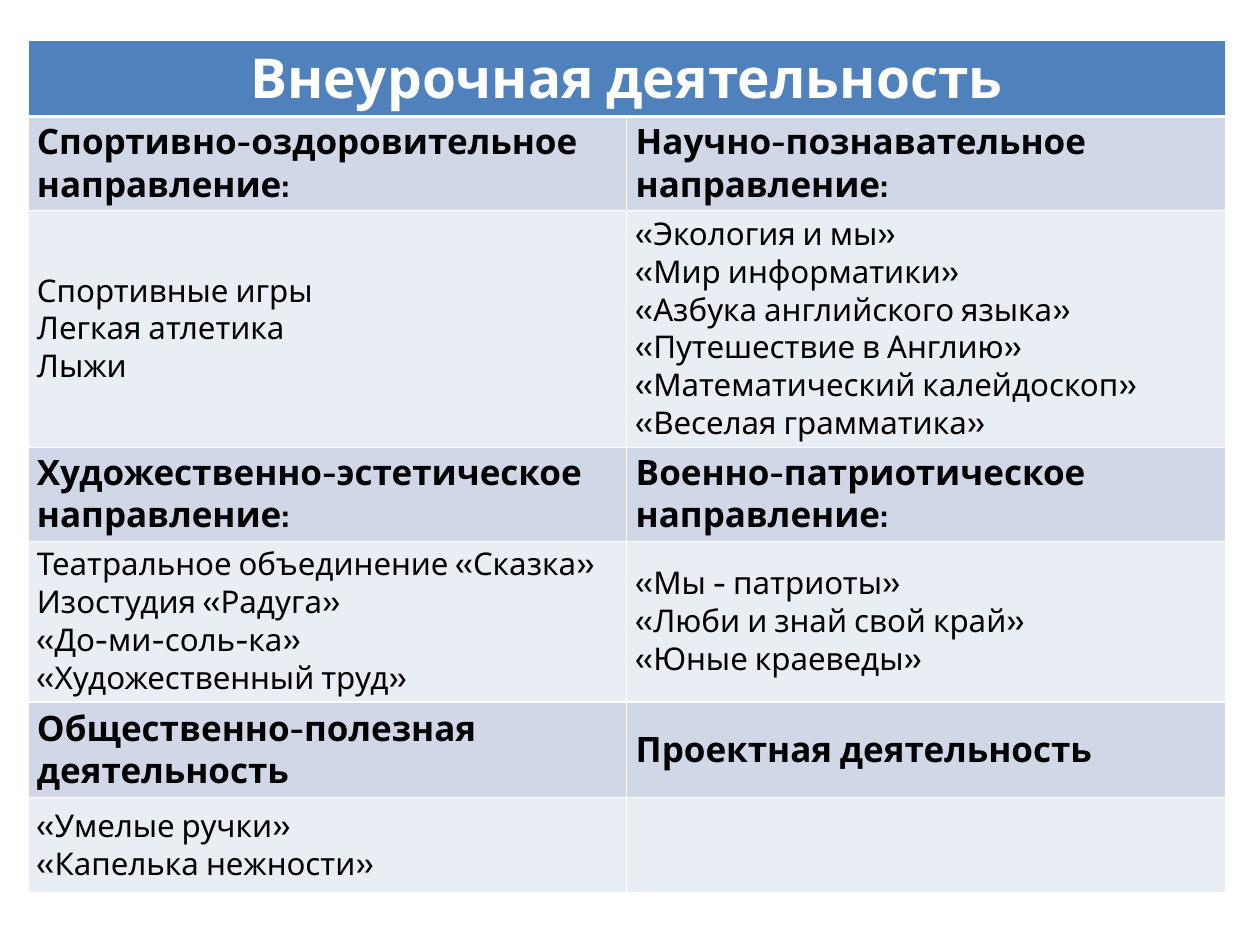
from dataclasses import dataclass

from lxml import etree
from pptx import Presentation
from pptx import util as u
from pptx.dml.color import RGBColor
from pptx.enum import text
from pptx.oxml.ns import qn


@dataclass(frozen=True)
class Theme:
    font: str = "Cabin"
    white: str = "FFFFFF"
    black: str = "000000"
    header: str = "4F81BD"
    band: str = "D0D8E8"
    pale: str = "E9EDF4"
    title_size: int = 44
    heading_size: int = 28
    body_size: int = 25
    rule: int = 1
    thick_rule: int = 3


# Each section: two headings, two lists, heights of both rows
SECTIONS = [
    (("Спортивно-оздоровительное направление:",
      "Научно-познавательное направление:"),
     (["Спортивные игры", "Легкая атлетика", "Лыжи"],
      ["«Экология и мы»", "«Мир информатики»", "«Азбука английского языка»",
       "«Путешествие в Англию»", "«Математический калейдоскоп»",
       "«Веселая грамматика»"]),
     (74.4, 187.2)),
    (("Художественно-эстетическое направление:",
      "Военно-патриотическое направление:"),
     (["Театральное объединение «Сказка»", "Изостудия «Радуга»",
       "«До-ми-соль-ка»", "«Художественный труд»"],
      ["«Мы - патриоты»", "«Люби и знай свой край»", "«Юные краеведы»"]),
     (74.4, 127.6)),
    (("Общественно-полезная деятельность", "Проектная деятельность"),
     (["«Умелые ручки»", "«Капелька нежности»"], []),
     (76.4, 76.4)),
]
TITLE_HEIGHT = 59.8


def write(tf, lines, *, font, size, color, bold=False,
          align=text.PP_ALIGN.LEFT):
    for i, line in enumerate(lines):
        p = tf.paragraphs[0] if i == 0 else tf.add_paragraph()
        p.alignment = align
        r = p.add_run()
        r.text = line
        r.font.name = font
        r.font.size = u.Pt(size)
        r.font.bold = bold
        r.font.color.rgb = RGBColor.from_string(color)


class SlideBuilder:
    def __init__(self, slide, theme):
        self.slide = slide
        self.theme = theme

    def table(self, left, top, col_widths, row_heights):
        gf = self.slide.shapes.add_table(
            len(row_heights), len(col_widths), u.Pt(left), u.Pt(top),
            u.Pt(sum(col_widths)), u.Pt(sum(row_heights)))
        tbl = gf.table
        for col, width in zip(tbl.columns, col_widths):
            col.width = u.Pt(width)
        for row, height in zip(tbl.rows, row_heights):
            row.height = u.Pt(height)
        return tbl

    def borders(self, cell, top, bottom):
        tc_pr = cell._tc.get_or_add_tcPr()
        rule = self.theme.rule
        for side, width in zip("LRTB", (rule, rule, top, bottom)):
            ln = etree.SubElement(tc_pr, qn(f"a:ln{side}"), w=str(u.Pt(width)))
            fill = etree.SubElement(ln, qn("a:solidFill"))
            etree.SubElement(fill, qn("a:srgbClr"), val=self.theme.white)

    def cell(self, cell, lines, fill, size, *, top=None, bottom=None, **fmt):
        t = self.theme
        self.borders(cell, top or t.rule, bottom or t.rule)
        cell.fill.solid()
        cell.fill.fore_color.rgb = RGBColor.from_string(fill)
        cell.vertical_anchor = text.MSO_ANCHOR.MIDDLE
        fmt.setdefault("color", t.black)
        write(cell.text_frame, lines, font=t.font, size=size, **fmt)


def main():
    theme = Theme()
    prs = Presentation()
    prs.slide_width, prs.slide_height = u.Pt(1008), u.Pt(756)
    s = SlideBuilder(prs.slides.add_slide(prs.slide_layouts[6]), theme)

    heights = [TITLE_HEIGHT] + [h for *_, pair in SECTIONS for h in pair]
    tbl = s.table(22.4, 32.4, [479, 479], heights)

    # Title row across both columns
    tbl.cell(0, 0).merge(tbl.cell(0, 1))
    for col, lines in enumerate((["Внеурочная деятельность"], [])):
        s.cell(tbl.cell(0, col), lines, theme.header, theme.title_size,
               bottom=theme.thick_rule, color=theme.white, bold=True,
               align=text.PP_ALIGN.CENTER)

    # Heading row and list row of every section
    for i, (headings, lists, _) in enumerate(SECTIONS):
        row = 1 + 2 * i
        for col in range(2):
            s.cell(tbl.cell(row, col), [headings[col]], theme.band,
                   theme.heading_size, bold=True,
                   top=theme.thick_rule if i == 0 else None)
            s.cell(tbl.cell(row + 1, col), lists[col], theme.pale,
                   theme.body_size)

    prs.save("out.pptx")


if __name__ == "__main__":
    main()
